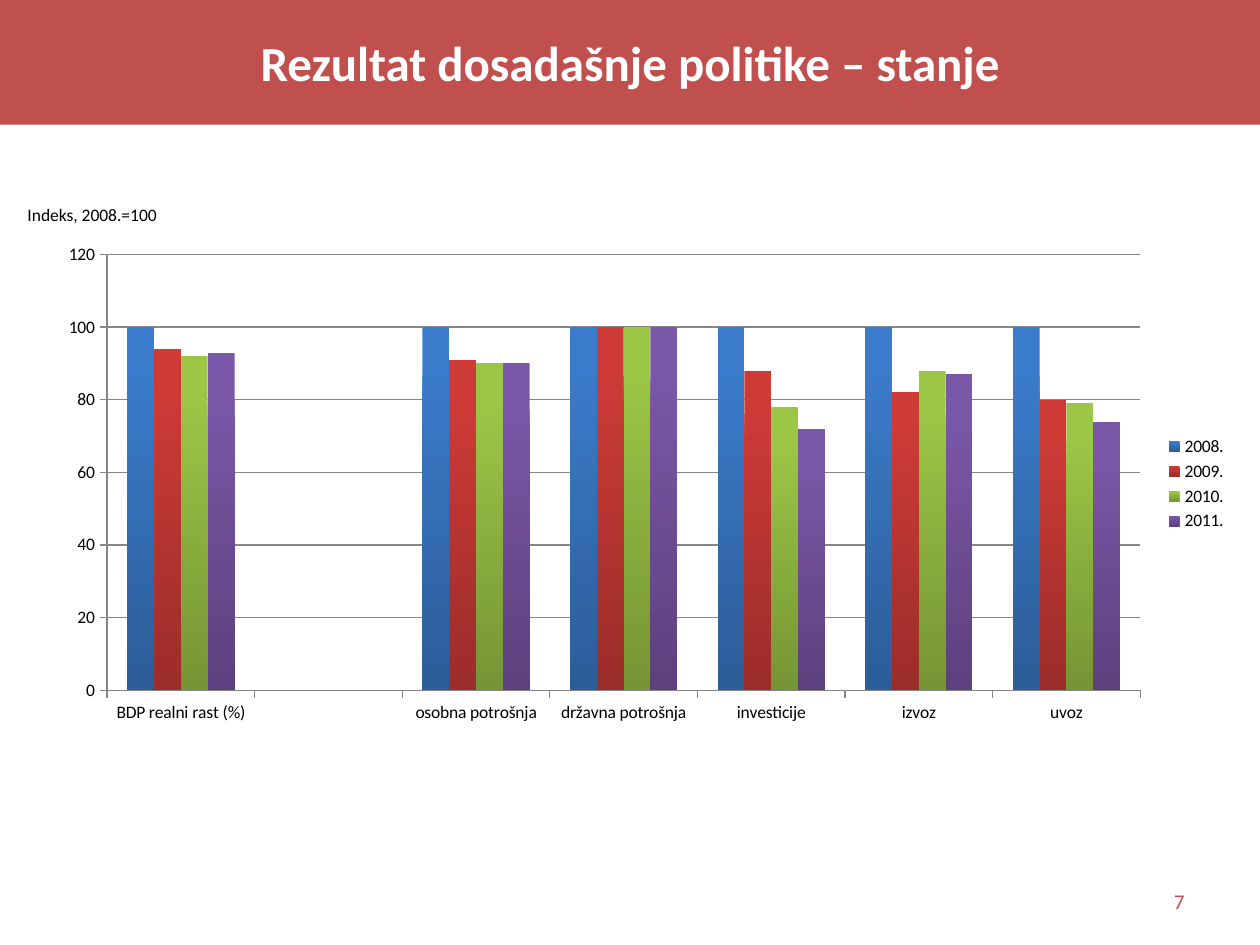
"""Build a slide with a clustered column chart of yearly indices."""
from typing import NamedTuple

import pptx
import pptx.chart.data
import pptx.dml.color
import pptx.enum.chart
import pptx.enum.shapes
import pptx.enum.text
import pptx.oxml
import pptx.oxml.ns
import pptx.util

RGB = pptx.dml.color.RGBColor
RED = RGB(0xC0, 0x50, 0x4D)
WHITE = RGB(0xFF, 0xFF, 0xFF)
BLACK = RGB(0, 0, 0)
GRAY = RGB(0x86, 0x86, 0x86)
FONT = "Calibri"
COLS, ROWS = 100, 75
CELL = pptx.util.Inches(0.1)
ALIGN = pptx.enum.text.PP_ALIGN
ANCHOR = pptx.enum.text.MSO_ANCHOR


class Box(NamedTuple):
    """Hold a place in columns and rows of the slide grid."""
    left: float
    top: float
    width: float
    height: float

    def place(self) -> tuple[int, ...]:
        """Return the place on the slide in EMU."""
        return tuple(round(part * CELL) for part in self)


class Year(NamedTuple):
    """Hold one series with its top and bottom colours."""
    name: str
    values: tuple[int, ...]
    top: RGB
    base: RGB


class Label(NamedTuple):
    """Hold a line of text and its look."""
    text: str
    box: Box
    size: int
    color: RGB
    align: ALIGN = ALIGN.LEFT
    anchor: ANCHOR = ANCHOR.TOP
    bold: bool = False
    fill: RGB | None = None


GROUPS = ("BDP realni rast (%)", "", "osobna potrošnja",
          "državna potrošnja", "investicije", "izvoz", "uvoz")
YEARS = (
    Year("2008.", (100, 0, 100, 100, 100, 100, 100),
         RGB(0x3A, 0x7C, 0xCB), RGB(0x2C, 0x5D, 0x98)),
    Year("2009.", (94, 0, 91, 100, 88, 82, 80),
         RGB(0xCE, 0x3B, 0x37), RGB(0x9B, 0x2D, 0x2A)),
    Year("2010.", (92, 0, 90, 100, 78, 88, 79),
         RGB(0x9C, 0xC7, 0x46), RGB(0x76, 0x95, 0x35)),
    Year("2011.", (93, 0, 90, 100, 72, 87, 74),
         RGB(0x7B, 0x57, 0xA8), RGB(0x5D, 0x41, 0x7E)),
)
CHART = Box(3.5, 18.6, 94.9, 39.6)
PLOT = Box(5, 1.6, 82, 34.6)
LABELS = (
    Label("Rezultat dosadašnje politike – stanje", Box(0, 0, COLS, 9.9),
          28, WHITE, ALIGN.CENTER, ANCHOR.MIDDLE, True, RED),
    Label("Indeks, 2008.=100", Box(1.2, 15.7, 24.4, 2.7), 10, BLACK),
    Label("7", Box(71.7, 69.5, 23.3, 4), 12, RED,
          ALIGN.RIGHT, ANCHOR.MIDDLE),
)


def style(font, size: int, color: RGB, bold: bool = False) -> None:
    """Set the look of a font."""
    font.name, font.size, font.bold = FONT, pptx.util.Pt(size), bold
    font.color.rgb = color


def write(slide, label: Label) -> None:
    """Draw a label, on a filled band if it has a fill."""
    place = label.box.place()
    if label.fill is None:
        shape = slide.shapes.add_textbox(*place)
    else:
        kind = pptx.enum.shapes.MSO_SHAPE.RECTANGLE
        shape = slide.shapes.add_shape(kind, *place)
        shape.shadow.inherit = False
        shape.fill.solid()
        shape.fill.fore_color.rgb = label.fill
        shape.line.fill.background()
    frame = shape.text_frame
    frame.word_wrap = True
    frame.vertical_anchor = label.anchor
    line = frame.paragraphs[0]
    line.text, line.alignment = label.text, label.align
    style(line.font, label.size, label.color, label.bold)


def shade(fill, year: Year) -> None:
    """Fill a series from its top colour down to its base."""
    fill.gradient()
    fill.gradient_angle = 270
    stops = zip(fill.gradient_stops, (year.top, year.base), (0.1, 1))
    for stop, color, spot in stops:
        stop.color.rgb, stop.position = color, spot


def fix(chart, box: Box) -> None:
    """Pin the inner plot area, given in grid cells from the chart corner."""
    area = chart.plots[0]._element.getparent()
    for old in area.findall(pptx.oxml.ns.qn("c:layout")):
        area.remove(old)
    sides = (CHART.width, CHART.height) * 2
    tags = [("layoutTarget", "inner"), ("xMode", "edge"), ("yMode", "edge")]
    tags += zip("xywh", (part / side for part, side in zip(box, sides)))
    body = "".join(f'<c:{tag} val="{value}"/>' for tag, value in tags)
    space = pptx.oxml.ns.nsdecls("c")
    area.insert(0, pptx.oxml.parse_xml(
        f"<c:layout {space}><c:manualLayout>{body}</c:manualLayout></c:layout>"))


def plot(slide) -> None:
    """Draw the column chart."""
    data = pptx.chart.data.CategoryChartData()
    data.categories = GROUPS
    for year in YEARS:
        data.add_series(year.name, year.values)
    kind = pptx.enum.chart.XL_CHART_TYPE.COLUMN_CLUSTERED
    chart = slide.shapes.add_chart(kind, *CHART.place(), data).chart
    style(chart.font, 10, BLACK)
    chart.has_title = False
    chart.has_legend = True
    chart.legend.position = pptx.enum.chart.XL_LEGEND_POSITION.RIGHT
    chart.legend.include_in_layout = False
    bars = chart.plots[0]
    bars.vary_by_categories = False
    bars.gap_width, bars.overlap = 150, 0
    for series, year in zip(bars.series, YEARS):
        shade(series.format.fill, year)
    scale = chart.value_axis
    scale.minimum_scale, scale.maximum_scale, scale.major_unit = 0, 120, 20
    scale.has_major_gridlines = True
    for axis in (chart.category_axis, scale):
        axis.major_tick_mark = pptx.enum.chart.XL_TICK_MARK.OUTSIDE
        axis.format.line.color.rgb = GRAY
    scale.major_gridlines.format.line.color.rgb = GRAY
    fix(chart, PLOT)


def main() -> None:
    """Build and save the slide."""
    deck = pptx.Presentation()
    deck.slide_width, deck.slide_height = COLS * CELL, ROWS * CELL
    slide = deck.slides.add_slide(deck.slide_layouts[6])
    plot(slide)
    for label in LABELS:
        write(slide, label)
    deck.save("out.pptx")


if __name__ == "__main__":
    main()
